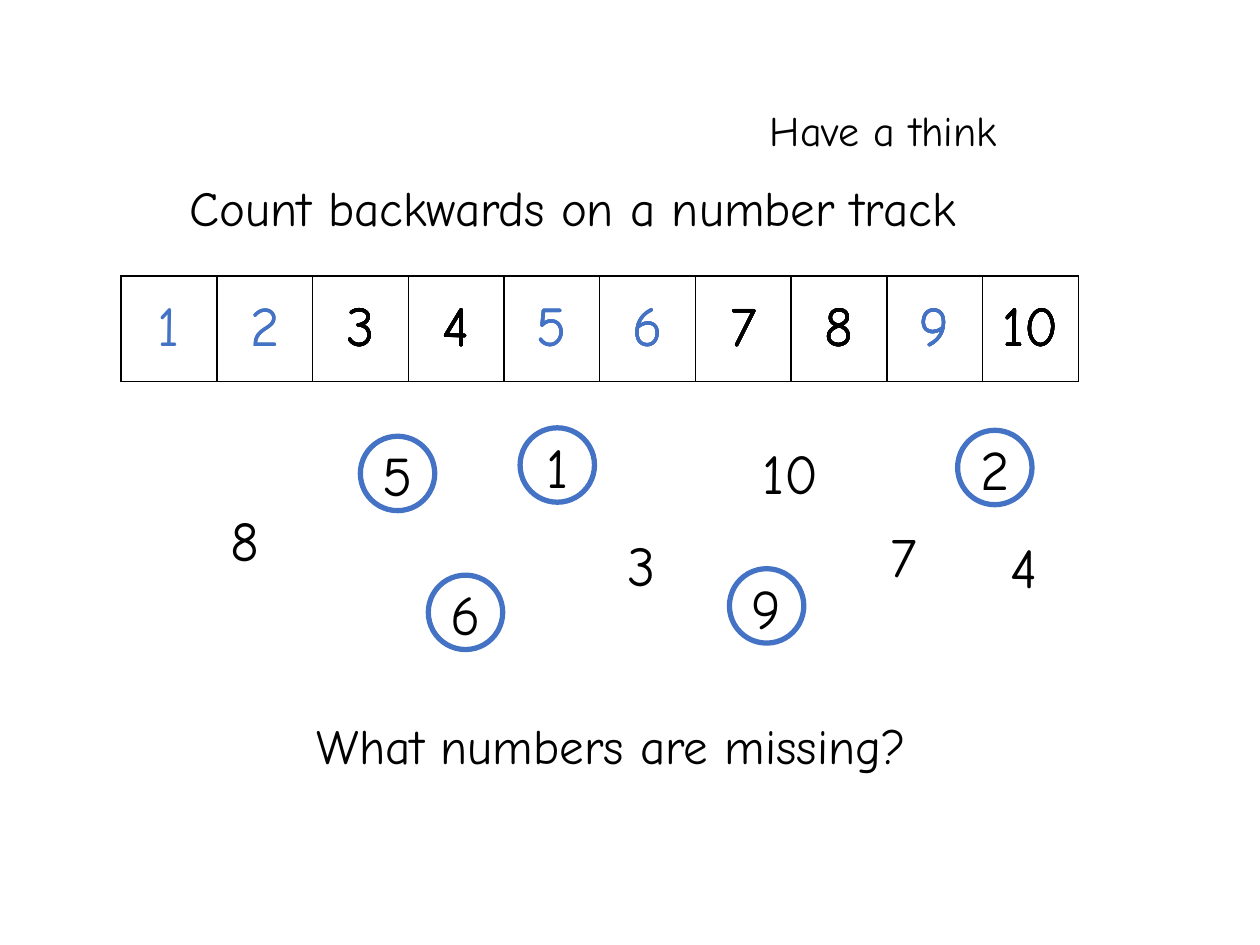
from dataclasses import dataclass

from lxml.etree import SubElement
from pptx import Presentation
from pptx.dml.color import RGBColor
from pptx.enum.shapes import MSO_SHAPE as Shape
from pptx.enum.text import MSO_ANCHOR as Anchor, MSO_AUTO_SIZE as AutoSize, PP_ALIGN as Align
from pptx.oxml.ns import qn
from pptx.util import Cm, Pt

FONT = "Comic Neue"
COLOURS = {"ink": "000000", "missing": "4472C4"}
NUMBER_SIZE = 32
BOX_WIDTH, BOX_HEIGHT, RING = 1.75, 1.63, 1.5
TRACK_LEFT, TRACK_TOP, CELL_WIDTH, CELL_HEIGHT = 2.44, 5.56, 1.93, 2.13


@dataclass
class Label:
    text: str
    left: float
    top: float
    width: float = BOX_WIDTH
    height: float = BOX_HEIGHT
    size: int = NUMBER_SIZE
    align: Align = Align.CENTER


HEADINGS = [
    Label("Have a think", 15.27, 1.98, 6.48, 1.27, 24, Align.LEFT),
    Label("Count backwards on a number track", 3.58, 3.45, 17.02, 1.45, 28, Align.LEFT),
    Label("What numbers are missing?", 3.81, 14.3, 17.02, 1.45, 28),
]
NUMBERS = [
    Label("8", 4.06, 10.06),
    Label("1", 10.36, 8.59),
    Label("6", 8.51, 11.56),
    Label("2", 19.18, 8.64),
    Label("5", 7.14, 8.76),
    Label("4", 19.76, 10.62),
    Label("3", 12.07, 10.57),
    Label("7", 17.35, 10.39),
    Label("9", 14.58, 11.43),
    Label("10", 15.06, 8.71),
]
# Missing numbers in the order they are filled in, counting backwards
MISSING = [9, 6, 5, 2, 1]


def colour(name: str) -> RGBColor:
    return RGBColor.from_string(COLOURS[name])


def write(paragraph, text: str, size: int, ink: str, align: Align) -> None:
    paragraph.alignment = align
    run = paragraph.add_run()
    run.text = text
    run.font.name = FONT
    run.font.size = Pt(size)
    run.font.color.rgb = colour(ink)


def add_label(slide, label: Label) -> None:
    box = slide.shapes.add_textbox(
        Cm(label.left), Cm(label.top), Cm(label.width), Cm(label.height))
    frame = box.text_frame
    frame.word_wrap = True
    frame.auto_size = AutoSize.SHAPE_TO_FIT_TEXT
    write(frame.paragraphs[0], label.text, label.size, "ink", label.align)


def add_ring(slide, label: Label) -> None:
    left = label.left + (BOX_WIDTH - RING) / 2
    top = label.top + (BOX_HEIGHT - RING) / 2 - 0.03
    ring = slide.shapes.add_shape(Shape.OVAL, Cm(left), Cm(top), Cm(RING), Cm(RING))
    ring.shadow.inherit = False
    ring.fill.background()
    ring.line.color.rgb = colour("missing")
    ring.line.width = Pt(3)


def add_borders(cell) -> None:
    properties = cell._tc.get_or_add_tcPr()
    for side in ("a:lnL", "a:lnR", "a:lnT", "a:lnB"):
        line = SubElement(properties, qn(side), w=str(Pt(1)))
        fill = SubElement(line, qn("a:solidFill"))
        SubElement(fill, qn("a:srgbClr"), val=COLOURS["ink"])


def add_track(slide, revealed: list[int]) -> None:
    table = slide.shapes.add_table(
        1, 10, Cm(TRACK_LEFT), Cm(TRACK_TOP), Cm(10 * CELL_WIDTH), Cm(CELL_HEIGHT)).table
    table.first_row = table.horz_banding = False
    for number, cell in enumerate(table.rows[0].cells, start=1):
        add_borders(cell)
        cell.fill.background()
        cell.vertical_anchor = Anchor.MIDDLE
        if number not in MISSING or number in revealed:
            ink = "missing" if number in MISSING else "ink"
            write(cell.text_frame.paragraphs[0], str(number), NUMBER_SIZE, ink, Align.CENTER)


def main() -> None:
    presentation = Presentation()
    presentation.slide_width, presentation.slide_height = Cm(25.4), Cm(19.05)
    slide = presentation.slides.add_slide(presentation.slide_layouts[6])

    # Number track with gaps
    add_track(slide, [])

    # Headings and scattered numbers
    for label in HEADINGS + NUMBERS:
        add_label(slide, label)

    # Rings around the missing numbers
    for label in NUMBERS:
        if int(label.text) in MISSING:
            add_ring(slide, label)

    # Tracks laid over the first, each with one more gap filled
    for count in range(1, len(MISSING) + 1):
        add_track(slide, MISSING[:count])

    presentation.save("out.pptx")


if __name__ == "__main__":
    main()
